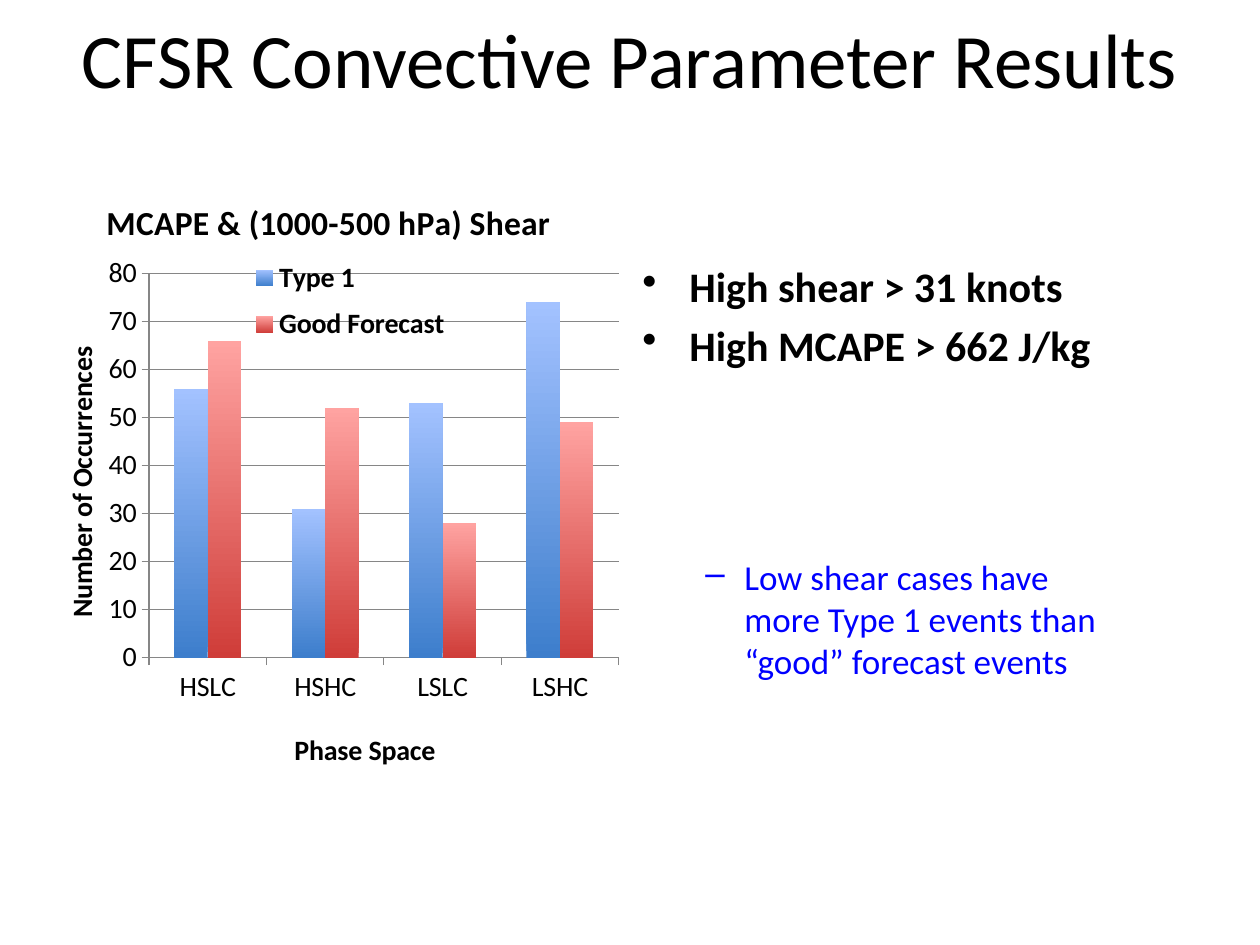
import lxml.etree
import pptx
import pptx.chart.data
import pptx.dml.color
import pptx.enum.chart
import pptx.enum.text
import pptx.oxml.ns
import pptx.util

RGB = pptx.dml.color.RGBColor
BLACK = RGB(0, 0, 0)
BLUE = RGB(0, 0, 255)
GRAY = RGB(0x86, 0x86, 0x86)
SKY = (RGB(0x3D, 0x7E, 0xCC), RGB(0xA3, 0xC2, 0xFF))
RED = (RGB(0xCF, 0x3D, 0x39), RGB(0xFF, 0xA3, 0xA1))
SCALE = 914400 / 126
Pt = pptx.util.Pt
qn = pptx.oxml.ns.qn


def px(n):
    return pptx.util.Emu(round(n * SCALE))


def put(obj, **vals):
    for key, val in vals.items():
        setattr(obj, key, val)


class Deck:
    face = "Calibri"

    def __init__(self):
        self.prs = pptx.Presentation()
        put(self.prs, slide_width=px(1260), slide_height=px(945))
        self.slide = self.prs.slides.add_slide(self.prs.slide_layouts[5])

    def font(self, font, size, bold=False, color=BLACK):
        put(font, name=self.face, size=Pt(size), bold=bold)
        font.color.rgb = color

    def title(self, text, left, top, width, height):
        shape = self.slide.shapes.title
        put(shape, left=px(left), top=px(top), width=px(width), height=px(height))
        frame = shape.text_frame
        put(frame, text=text, word_wrap=True,
            vertical_anchor=pptx.enum.text.MSO_ANCHOR.MIDDLE)
        par = frame.paragraphs[0]
        par.alignment = pptx.enum.text.PP_ALIGN.CENTER
        self.font(par.runs[0].font, 44)

    def bullets(self, items, left, top, width, height, inset):
        box = self.slide.shapes.add_textbox(px(left), px(top), px(width), px(height))
        frame = box.text_frame
        put(frame, word_wrap=True, margin_top=px(inset))
        for i, item in enumerate(items):
            par = frame.paragraphs[0] if i == 0 else frame.add_paragraph()
            put(par, level=item["level"], space_before=Pt(item["gap"]))
            run = par.add_run()
            run.text = item["text"]
            self.font(run.font, item["size"], item["bold"], item["color"])
            props = par._p.get_or_add_pPr()
            props.set("marL", str(px(item["left"])))
            props.set("indent", str(-px(item["hang"])))
            mark = lxml.etree.SubElement(props, qn("a:buChar"))
            mark.set("char", item["mark"])

    def place(self, node, **vals):
        old = node.find(qn("c:layout"))
        if old is not None:
            node.remove(old)
        area = node.makeelement(qn("c:layout"))
        inner = lxml.etree.SubElement(area, qn("c:manualLayout"))
        for key, val in vals.items():
            lxml.etree.SubElement(inner, qn("c:" + key)).set("val", str(val))
        over = node.find(qn("c:overlay"))
        if over is None:
            node.insert(0, area)
        else:
            over.addprevious(area)

    def label(self, title, text, size, x, y):
        title.text_frame.text = text
        run = title.text_frame.paragraphs[0].runs[0]
        self.font(run.font, size, True)
        self.place(title._element, xMode="edge", yMode="edge", x=x, y=y)

    def axis(self, axis, text, x, y):
        put(axis, major_tick_mark=pptx.enum.chart.XL_TICK_MARK.OUTSIDE)
        axis.format.line.color.rgb = GRAY
        self.font(axis.tick_labels.font, 16)
        self.label(axis.axis_title, text, 16, x, y)

    def chart(self, cats, series, left, top, width, height):
        data = pptx.chart.data.CategoryChartData()
        data.categories = cats
        for name, vals, _ in series:
            data.add_series(name, vals)
        kind = pptx.enum.chart.XL_CHART_TYPE.COLUMN_CLUSTERED
        chart = self.slide.shapes.add_chart(
            kind, px(left), px(top), px(width), px(height), data).chart
        self.font(chart.font, 16)
        put(chart, has_title=True, has_legend=True)
        self.label(chart.chart_title, "MCAPE & (1000-500 hPa) Shear", 19.2, 0.13, 0.04)
        self.axis(chart.category_axis, "Phase Space", 0.44, 0.9)
        self.axis(chart.value_axis, "Number of Occurrences", 0.06, 0.28)
        put(chart.value_axis, minimum_scale=0, maximum_scale=80, major_unit=10,
            has_major_gridlines=True)
        chart.value_axis.major_gridlines.format.line.color.rgb = GRAY
        put(chart.legend, position=pptx.enum.chart.XL_LEGEND_POSITION.LEFT,
            include_in_layout=True)
        self.font(chart.legend.font, 16, True)
        self.place(chart.legend._element, xMode="edge", yMode="edge",
                   x=0.37, y=0.13, w=0.34, h=0.17)
        plot = chart.plots[0]
        put(plot, gap_width=150, overlap=0, vary_by_categories=False)
        self.place(plot._element.getparent(), layoutTarget="inner",
                   xMode="edge", yMode="edge", x=0.21, y=0.17, w=0.77, h=0.62)
        for bars, (_, _, tones) in zip(plot.series, series):
            bars.invert_if_negative = False
            fill = bars.format.fill
            fill.gradient()
            fill.gradient_angle = 90
            for stop, tone in zip(fill.gradient_stops, tones):
                stop.color.rgb = tone


def main():
    deck = Deck()
    deck.title("CFSR Convective Parameter Results", 63, -21, 1134, 158)
    deck.chart(
        ["HSLC", "HSHC", "LSLC", "LSHC"],
        [("Type 1", (56, 31, 53, 74), SKY),
         ("Good Forecast", (66, 52, 28, 49), RED)],
        21, 168, 610, 620)
    main_style = dict(level=0, size=24, bold=True, color=BLACK,
                      left=47, hang=47, mark="•")
    sub_style = dict(level=1, size=20, bold=False, color=BLUE,
                     left=102, hang=39, mark="–")
    deck.bullets(
        [dict(main_style, text="High shear > 31 knots", gap=0),
         dict(main_style, text="High MCAPE > 662 J/kg", gap=4.8),
         dict(sub_style, gap=106, text="Low shear cases have more Type 1 events "
              "than “good” forecast events")],
        630, 136, 505, 567, 125)
    deck.prs.save("out.pptx")


if __name__ == "__main__":
    main()
